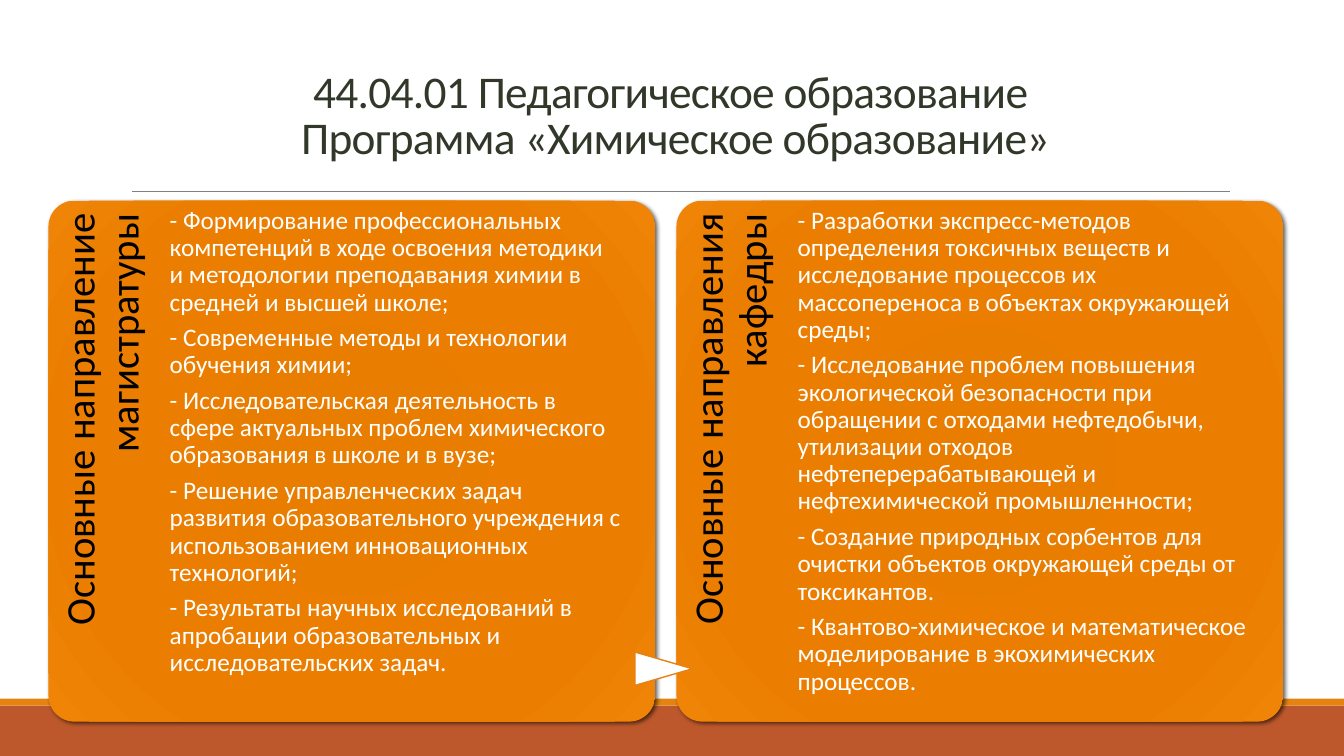
from lxml import etree
from pptx import Presentation
from pptx.dml.color import RGBColor
from pptx.enum import shapes, text
from pptx.oxml import parse_xml
from pptx.oxml.ns import nsdecls, qn
from pptx.util import Pt

FONT = "Calibri"
COLORS = {
    "band": "BD582C", "stripe": "E48312", "rule": "808080", "title": "313829",
    "label": "000000", "body": "FFFFFF", "arrow": "FFFFFF", "shadow": "000000",
}
CARD_STOPS = [(0, "E57B00"), (34, "E87D00"), (70, "EB7E00"), (100, "EF8407")]
CARD_TOP, CARD_W, CARD_H = 143.3, 433.4, 372.2
CARD_LEFT, CARD_STEP = 34.6, 448.6

CARDS = [
    ("Основные направление магистратуры", [
        "- Формирование профессиональных компетенций в ходе освоения методики "
        "и методологии преподавания химии в средней и высшей школе;",
        "- Современные методы и технологии обучения химии;",
        "- Исследовательская деятельность в сфере актуальных проблем "
        "химического образования в школе и в вузе;",
        "- Решение управленческих задач развития образовательного учреждения "
        "с использованием инновационных технологий;",
        "- Результаты научных исследований в апробации образовательных и "
        "исследовательских задач.",
    ]),
    ("Основные направления кафедры", [
        "- Разработки экспресс-методов определения токсичных веществ и "
        "исследование процессов их массопереноса в объектах окружающей среды;",
        "- Исследование проблем повышения экологической безопасности при "
        "обращении с отходами нефтедобычи, утилизации отходов "
        "нефтеперерабатывающей и нефтехимической промышленности;",
        "- Создание природных сорбентов для очистки объектов окружающей "
        "среды от токсикантов.",
        "- Квантово-химическое и математическое моделирование в "
        "экохимических процессов.",
    ]),
]


def rgb(name):
    return RGBColor.from_string(COLORS[name])


def add_shape(s, kind, box, fill=None, line=None):
    sp = s.shapes.add_shape(kind, *map(Pt, box))
    sp.shadow.inherit = False
    if fill:
        sp.fill.solid()
        sp.fill.fore_color.rgb = rgb(fill)
    if line:
        sp.line.color.rgb = rgb(line)
        sp.line.width = Pt(1)
    else:
        sp.line.fill.background()
    return sp


def add_text(s, box, lines, size, color, insets=(0, 0, 0, 0),
             anchor=text.MSO_ANCHOR.TOP, **para):
    """Add a wrapped text box; insets run left, top, right, bottom."""
    sp = s.shapes.add_textbox(*map(Pt, box))
    tf = sp.text_frame
    frame = {"word_wrap": True, "vertical_anchor": anchor}
    for side, inset in zip(("left", "top", "right", "bottom"), insets):
        frame[f"margin_{side}"] = Pt(inset)
    for key, value in frame.items():
        setattr(tf, key, value)
    for i, line in enumerate(lines):
        p = tf.paragraphs[0] if i == 0 else tf.add_paragraph()
        p.text = line
        for key, value in para.items():
            setattr(p, key, value)
        for r in p.runs:
            for key, value in {"name": FONT, "size": Pt(size)}.items():
                setattr(r.font, key, value)
            r.font.color.rgb = rgb(color)
    return sp


def add_rule(s, x1, x2, y):
    line = s.shapes.add_connector(
        shapes.MSO_CONNECTOR.STRAIGHT, Pt(x1), Pt(y), Pt(x2), Pt(y))
    line.line.color.rgb = rgb("rule")
    line.line.width = Pt(0.5)
    etree.SubElement(line._element.spPr, qn("a:effectLst"))


def style_card(sp):
    """Give a card its radial gradient and its soft shadow."""
    stops = "".join(
        f'<a:gs pos="{pos * 1000}"><a:srgbClr val="{color}"/></a:gs>'
        for pos, color in CARD_STOPS)
    gradient = parse_xml(
        f'<a:gradFill {nsdecls("a")} rotWithShape="1"><a:gsLst>{stops}</a:gsLst>'
        '<a:path path="circle"><a:fillToRect l="100000" t="100000" r="100000" '
        'b="100000"/></a:path></a:gradFill>')
    spPr = sp._element.spPr
    spPr.find(qn("a:prstGeom")).addnext(gradient)
    shadow = parse_xml(
        f'<a:outerShdw {nsdecls("a")} blurRad="{Pt(3)}" dist="{Pt(2)}" '
        f'dir="2700000" rotWithShape="0"><a:srgbClr val="{COLORS["shadow"]}">'
        '<a:alpha val="60000"/></a:srgbClr></a:outerShdw>')
    spPr.find(qn("a:effectLst")).append(shadow)


def add_card(s, left, label, items):
    card = add_shape(s, shapes.MSO_SHAPE.ROUNDED_RECTANGLE,
                     (left, CARD_TOP, CARD_W, CARD_H))
    card.adjustments[0] = 0.05
    style_card(card)
    side = add_text(s, (left - 109.4, 252, 305.3, 86.4), [label], 29, "label",
                    insets=(0, 8, 10, 0), alignment=text.PP_ALIGN.RIGHT,
                    line_spacing=0.9)
    side.rotation = 270
    add_text(s, (left + 86.6, CARD_TOP, 323, CARD_H), items, 18, "body",
             insets=(0, 5, 0, 0), line_spacing=0.9, space_after=Pt(6))


def main():
    prs = Presentation()
    prs.slide_width, prs.slide_height = Pt(960), Pt(540)
    s = prs.slides.add_slide(prs.slide_layouts[6])

    rect = shapes.MSO_SHAPE.RECTANGLE
    add_shape(s, rect, (0, 504, 960, 36), "band")
    add_shape(s, rect, (0, 499, 960, 5), "stripe")
    add_rule(s, 94.3, 878.4, 136.8)
    title = add_text(
        s, (86.4, 40, 792, 77),
        ["44.04.01 Педагогическое образование \vПрограмма «Химическое образование»"],
        32.4, "title", anchor=text.MSO_ANCHOR.BOTTOM,
        alignment=text.PP_ALIGN.CENTER, line_spacing=0.85)
    for r in title.text_frame.paragraphs[0].runs:
        r._r.get_or_add_rPr().set("spc", "-50")

    for i, (label, items) in enumerate(CARDS):
        add_card(s, CARD_LEFT + i * CARD_STEP, label, items)
    arrow = add_shape(s, shapes.MSO_SHAPE.FLOWCHART_EXTRACT,
                      (462.2, 457.2, 23.8, 41), "arrow", "stripe")
    arrow.rotation = 90

    prs.save("out.pptx")


if __name__ == "__main__":
    main()
